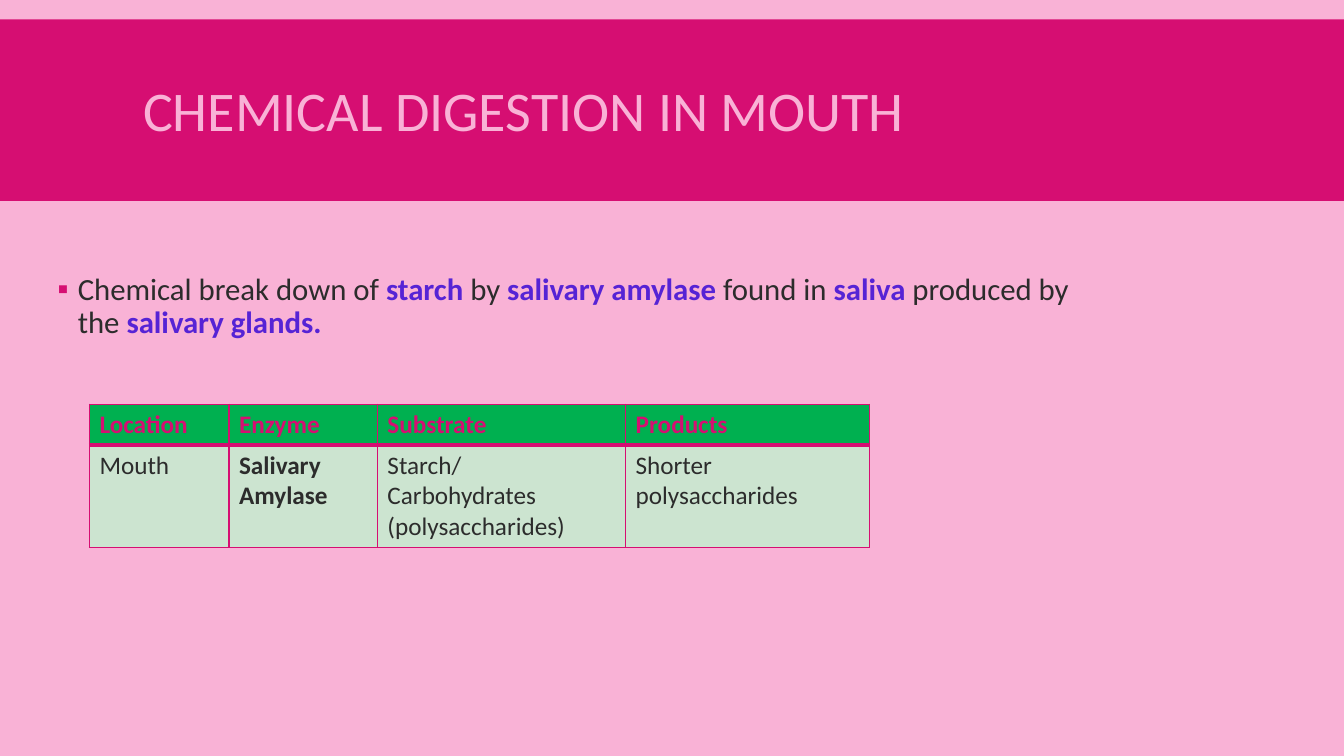
"""Builds a slide on chemical digestion in the mouth."""
from dataclasses import dataclass

from lxml.etree import SubElement
from pptx import Presentation
from pptx.dml.color import RGBColor as RGB
from pptx.enum.shapes import MSO_SHAPE
from pptx.enum.text import MSO_ANCHOR, MSO_AUTO_SIZE, PP_ALIGN
from pptx.oxml import parse_xml
from pptx.oxml.ns import nsdecls, qn
from pptx.util import Pt


@dataclass(frozen=True)
class Theme:
    font: str = "Calibri"
    pink: str = "F9B2D6"
    magenta: str = "D60E72"
    ink: str = "2C2C2C"
    violet: str = "5623D5"
    green: str = "00B050"
    mint: str = "CCE4D0"
    title_size: int = 40
    body_size: int = 22
    table_size: int = 18


THEME = Theme()


def style(font, size, color, bold=False):
    font.name = THEME.font
    font.size = Pt(size)
    font.bold = bold
    font.color.rgb = RGB.from_string(color)


def place(shape, left, top, width, height):
    shape.left, shape.top = Pt(left), Pt(top)
    shape.width, shape.height = Pt(width), Pt(height)


deck = Presentation()
deck.slide_width, deck.slide_height = Pt(960), Pt(540)
slide = deck.slides.add_slide(deck.slide_layouts[1])
slide.background.fill.solid()
slide.background.fill.fore_color.rgb = RGB.from_string(THEME.pink)

band = slide.shapes.add_shape(MSO_SHAPE.RECTANGLE, 0, Pt(13.9), Pt(960), Pt(129.6))
band.shadow.inherit = False
band.fill.solid()
band.fill.fore_color.rgb = RGB.from_string(THEME.magenta)
band.line.fill.background()
slide.shapes.element.insert(2, band.element)

title = slide.shapes.title
place(title, 95, 22, 770.4, 118.8)
title.text_frame.text = "CHEMICAL DIGESTION IN MOUTH"
title.text_frame.auto_size = MSO_AUTO_SIZE.NONE
title.text_frame.vertical_anchor = MSO_ANCHOR.MIDDLE
heading = title.text_frame.paragraphs[0]
heading.alignment = PP_ALIGN.LEFT
heading.line_spacing = 0.85
style(heading.font, THEME.title_size, THEME.pink)

body = slide.placeholders[1]
place(body, 34, 192.2, 770.4, 331.2)
body.text_frame.auto_size = MSO_AUTO_SIZE.NONE
breakdown = body.text_frame.paragraphs[0]
breakdown.line_spacing = 0.9
breakdown.space_before, breakdown.space_after = Pt(12), Pt(2)
phrases = [
    ("Chemical break down of ", False),
    ("starch ", True),
    ("by ", False),
    ("salivary amylase ", True),
    ("found in ", False),
    ("saliva", True),
    (" produced by the ", False),
    ("salivary glands.", True),
]
for words, is_key in phrases:
    phrase = breakdown.add_run()
    phrase.text = words
    style(phrase.font, THEME.body_size, THEME.violet if is_key else THEME.ink, is_key)
indents = breakdown._p.get_or_add_pPr()
indents.set("marL", str(Pt(14.4)))
indents.set("indent", str(-Pt(14.4)))
SubElement(SubElement(indents, qn("a:buClr")), qn("a:srgbClr"), val=THEME.magenta)
SubElement(indents, qn("a:buFont"), typeface=THEME.font)
SubElement(indents, qn("a:buChar"), char="▪")

rows = [
    ["Location", "Enzyme", "Substrate", "Products"],
    ["Mouth", "Salivary Amylase", "Starch/\nCarbohydrates (polysaccharides)",
     "Shorter polysaccharides"],
]
widths = [99.7, 106, 177.3, 174.2]
heights = [29.2, 72.6]
enzymes = slide.shapes.add_table(
    len(rows), len(widths), Pt(63.9), Pt(288.7), Pt(sum(widths)), Pt(sum(heights))
).table
for column, width in zip(enzymes.columns, widths):
    column.width = Pt(width)
for r, (entries, height) in enumerate(zip(rows, heights)):
    enzymes.rows[r].height = Pt(height)
    is_header = r == 0
    for c, entry in enumerate(entries):
        cell = enzymes.cell(r, c)
        cell.text = entry
        cell.fill.solid()
        cell.fill.fore_color.rgb = RGB.from_string(THEME.green if is_header else THEME.mint)
        for line in cell.text_frame.paragraphs:
            style(line.font, THEME.table_size,
                  THEME.magenta if is_header else THEME.ink, is_header or c == 1)
        borders = {"lnL": 1, "lnR": 1, "lnT": 1 if is_header else 3, "lnB": 3 if is_header else 1}
        for position, (side, weight) in enumerate(borders.items()):
            cell._tc.get_or_add_tcPr().insert(position, parse_xml(
                f'<a:{side} {nsdecls("a")} w="{Pt(weight)}"><a:solidFill>'
                f'<a:srgbClr val="{THEME.magenta}"/></a:solidFill></a:{side}>'))

deck.save("out.pptx")
